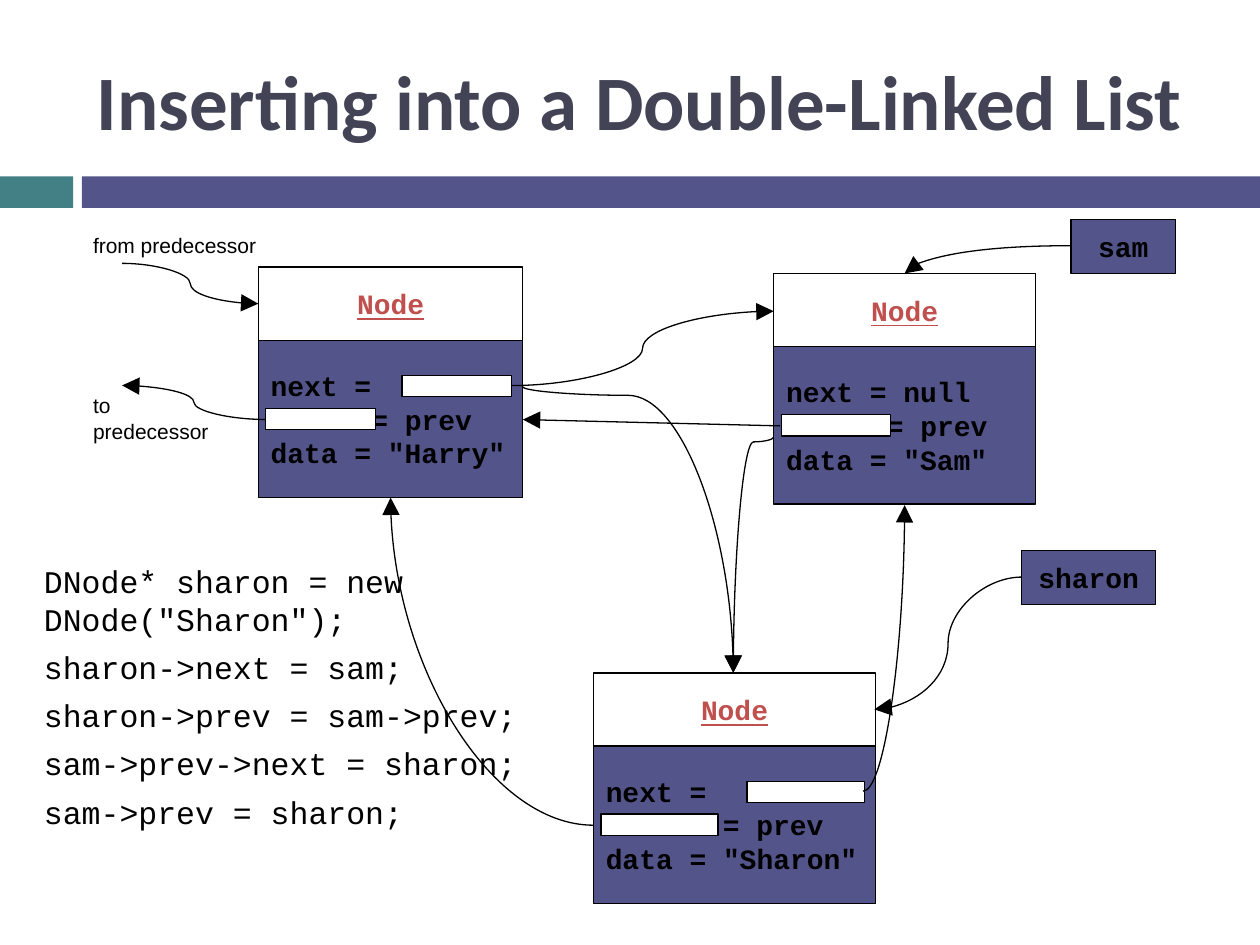
from dataclasses import dataclass

import pptx
import pptx.dml.color
import pptx.enum.shapes
import pptx.enum.text
import pptx.oxml
import pptx.oxml.ns
import pptx.util
from pptx.util import Inches

INK, PLUM, TEAL, WHITE = "000000", "53548A", "438086", "FFFFFF"
SLATE, RED = "424456", "C0504D"
MONO = "Courier New"
HEAD, BODY = 0.58, 1.25
LEFT = pptx.enum.text.PP_ALIGN.LEFT
CENTER = pptx.enum.text.PP_ALIGN.CENTER


@dataclass
class Style:
    size: float = 16
    font: str = MONO
    color: str = INK
    bold: bool = True
    under: bool = False
    align: int = LEFT
    after: float = 0
    middle: bool = True
    wrap: bool = False


@dataclass
class Node:
    x: float
    y: float
    w: float
    name: str
    slot: float
    indent: float
    linked: bool = True


@dataclass
class Label:
    x: float
    y: float
    w: float
    h: float
    lines: list[str]
    style: Style


@dataclass
class Link:
    start: tuple[float, float]
    end: tuple[float, float]
    kind: str = "curvedConnector3"
    bend: float = 0.5
    down: bool = False


def rgb(code: str) -> pptx.dml.color.RGBColor:
    return pptx.dml.color.RGBColor.from_string(code)


def write(shape, lines: list[str], style: Style) -> None:
    frame = shape.text_frame
    frame.word_wrap = style.wrap
    anchor = pptx.enum.text.MSO_ANCHOR
    frame.vertical_anchor = anchor.MIDDLE if style.middle else anchor.TOP
    frame.text = "\n".join(lines)
    for para in frame.paragraphs:
        para.alignment = style.align
        para.space_after = pptx.util.Pt(style.after)
        font = para.font
        font.name, font.size = style.font, pptx.util.Pt(style.size)
        font.bold, font.underline = style.bold, style.under
        font.color.rgb = rgb(style.color)


def box(slide, x: float, y: float, w: float, h: float,
        fill: str | None, edge: bool = True):
    kind = pptx.enum.shapes.MSO_SHAPE.RECTANGLE
    shape = slide.shapes.add_shape(kind, Inches(x), Inches(y), Inches(w), Inches(h))
    shape.shadow.inherit = False
    if fill:
        shape.fill.solid()
        shape.fill.fore_color.rgb = rgb(fill)
    else:
        shape.fill.background()
    if edge:
        shape.line.color.rgb = rgb(INK)
        shape.line.width = pptx.util.Pt(0.75)
    else:
        shape.line.fill.background()
    return shape


def label(slide, item: Label) -> None:
    shape = slide.shapes.add_textbox(
        Inches(item.x), Inches(item.y), Inches(item.w), Inches(item.h))
    write(shape, item.lines, item.style)


def node(slide, item: Node) -> None:
    top = item.y + HEAD
    body = box(slide, item.x, top, item.w, BODY, PLUM)
    first = "next =" if item.linked else "next = null"
    write(body, [first, "= prev", f'data = "{item.name}"'], Style())
    props = body.text_frame.paragraphs[1]._p.get_or_add_pPr()
    props.set("marL", str(Inches(item.indent)))
    head = box(slide, item.x, item.y, item.w, HEAD, None)
    write(head, ["Node"], Style(color=RED, under=True, align=CENTER))
    if item.linked:
        box(slide, item.x + item.w - item.slot - 0.09, top + 0.28, item.slot, 0.17, WHITE)
    box(slide, item.x + 0.06, top + 0.54, item.slot, 0.17, WHITE)


def link(slide, item: Link) -> None:
    (ax, ay), (bx, by) = item.start, item.end
    turn = 0
    if item.down:
        mx, my = (ax + bx) / 2, (ay + by) / 2
        long, wide = (by - ay) / 2, abs(bx - ax) / 2
        turn = 90 if bx < ax else 270
        side = 1 if turn == 90 else -1
        ax, bx = mx - side * long, mx + side * long
        ay, by = my - wide, my + wide
    line = slide.shapes.add_connector(
        pptx.enum.shapes.MSO_CONNECTOR.CURVE,
        Inches(ax), Inches(ay), Inches(bx), Inches(by))
    line.line.color.rgb = rgb(INK)
    line.line.width = pptx.util.Pt(0.75)
    qn = pptx.oxml.ns.qn
    props = line._element.spPr
    if turn:
        props.find(qn("a:xfrm")).set("rot", str(turn * 60000))
    geom = props.find(qn("a:prstGeom"))
    geom.set("prst", item.kind)
    if item.kind == "curvedConnector3":
        guide = geom.find(qn("a:avLst")).makeelement(
            qn("a:gd"), {"name": "adj1", "fmla": f"val {round(item.bend * 100000)}"})
        geom.find(qn("a:avLst")).append(guide)
    space = pptx.oxml.ns.nsdecls("a")
    tail = pptx.oxml.parse_xml(f'<a:tailEnd {space} type="triangle" w="lg" len="lg"/>')
    line.line._get_or_add_ln().append(tail)
    props.append(pptx.oxml.parse_xml(f"<a:effectLst {space}/>"))


NODES = [
    Node(2.05, 2.12, 2.1, "Harry", 0.87, 0.8),
    Node(6.14, 2.17, 2.08, "Sam", 0.87, 0.8, False),
    Node(4.71, 5.34, 2.24, "Sharon", 0.93, 0.93),
]
LINKS = [
    Link((4.06, 3.06), (6.14, 2.47)),
    Link((6.19, 3.38), (4.15, 3.33), "line"),
    Link((4.71, 6.55), (3.1, 3.95), "curvedConnector2"),
    Link((6.85, 6.28), (7.18, 4.01), "curvedConnector2"),
    Link((6.14, 3.47), (5.82, 5.34), bend=0.02, down=True),
    Link((4.15, 3.07), (5.82, 5.34), bend=0.03, down=True),
    Link((2.11, 3.33), (0.97, 3.06)),
    Link((0.97, 2.09), (2.05, 2.41)),
    Link((8.5, 1.95), (7.18, 2.17), "curvedConnector2"),
    Link((8.11, 4.58), (6.94, 5.63)),
]
CODE = [
    'DNode* sharon = new DNode("Sharon");',
    "sharon->next = sam;",
    "sharon->prev = sam->prev;",
    "sam->prev->next = sharon;",
    "sam->prev = sharon;",
]
NOTE = Style(12, "Arial", bold=False, middle=False, wrap=True)
LABELS = [
    Label(0.67, 0.25, 8.92, 1.08, ["Inserting into a Double-Linked List"],
          Style(44, "Calibri", SLATE, wrap=True)),
    Label(0.25, 4.42, 4.05, 2.21, CODE, Style(18, bold=False, after=6)),
    Label(0.64, 1.8, 2, 0.3, ["from predecessor"], NOTE),
    Label(0.64, 3.07, 1.25, 0.5, ["to predecessor"], NOTE),
]
NAMES = [("sam", 8.5, 1.74, 0.83), ("sharon", 8.11, 4.37, 1.06)]


def main() -> None:
    deck = pptx.Presentation()
    deck.slide_width, deck.slide_height = Inches(10), Inches(7.5)
    slide = deck.slides.add_slide(deck.slide_layouts[6])
    box(slide, 0, 1.4, 0.58, 0.25, TEAL, False)
    box(slide, 0.65, 1.4, 9.35, 0.25, PLUM, False)
    for item in NODES:
        node(slide, item)
    for item in LINKS:
        link(slide, item)
    for item in LABELS:
        label(slide, item)
    for name, x, y, w in NAMES:
        write(box(slide, x, y, w, 0.43, PLUM), [name], Style(align=CENTER))
    deck.save("out.pptx")


if __name__ == "__main__":
    main()
